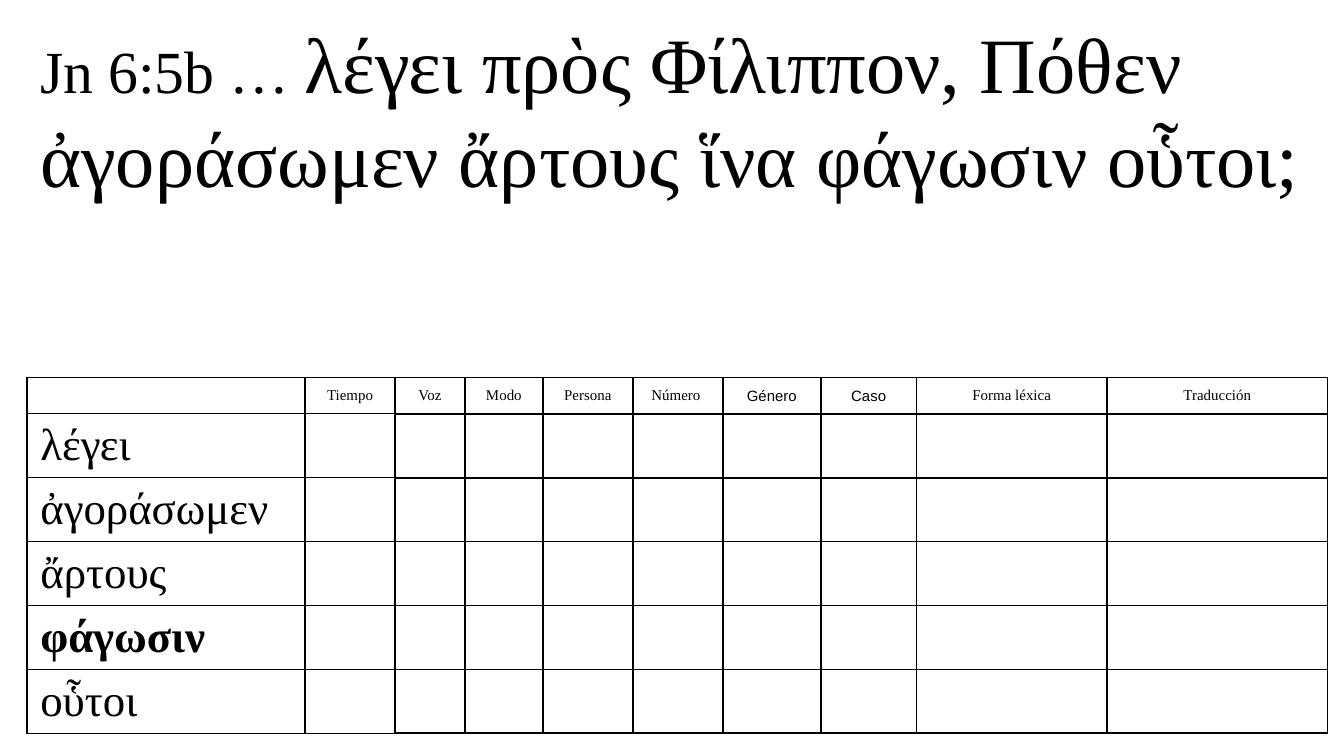
from lxml import etree
from pptx import Presentation
from pptx.dml.color import RGBColor
from pptx.enum.text import MSO_ANCHOR, MSO_AUTO_SIZE, PP_ALIGN
from pptx.oxml.ns import qn
from pptx.util import Inches, Pt

LEFT, CENTER = PP_ALIGN.LEFT, PP_ALIGN.CENTER
TOP, MIDDLE = MSO_ANCHOR.TOP, MSO_ANCHOR.MIDDLE
GROW = MSO_AUTO_SIZE.SHAPE_TO_FIT_TEXT

COLORS = {"ink": "000000"}
SERIF, SANS = "Times New Roman", "Arial"

VERSE = [
    ("Jn 6:5b … ", 32),
    ("λέγει πρὸς Φίλιππον, Πόθεν ἀγοράσωμεν ἄρτους ἵνα φάγωσιν οὗτοι;", 42),
]
HEADS = ["", "Tiempo", "Voz", "Modo", "Persona", "Número ", "Género",
         "Caso", "Forma léxica", "Traducción"]
SANS_HEADS = {"Género", "Caso"}
WORDS = ["λέγει", "ἀγοράσωμεν", "ἄρτους", "φάγωσιν", "οὗτοι"]
BOLD_WORD = "φάγωσιν"
WIDTHS = [2.07, 0.67, 0.52, 0.58, 0.67, 0.67, 0.73, 0.71, 1.42, 1.64]
HEAD_H, BODY_H = 0.27, 2.37

SIDE, EDGE = Inches(0.1), Inches(0.15) // 4
CELL = {"margin_left": SIDE, "margin_right": SIDE,
        "margin_top": EDGE, "margin_bottom": EDGE,
        "vertical_anchor": MIDDLE}


def apply(target, values):
    for name, value in values.items():
        setattr(target, name, value)


def add_run(para, text, size, font=SERIF, bold=False):
    run = para.add_run()
    run.text = text
    apply(run.font, {"size": Pt(size), "name": font, "bold": bold})
    run.font.color.rgb = RGBColor.from_string(COLORS["ink"])


def set_borders(cell, across):
    """Draw the four sides; across maps T and B to widths in points."""
    props = cell._tc.get_or_add_tcPr()
    widths = {"L": 1, "R": 1, **across}
    for spot, (side, width) in enumerate(widths.items()):
        line = etree.Element(qn(f"a:ln{side}"), w=str(Pt(width)))
        fill = etree.SubElement(line, qn("a:solidFill"))
        etree.SubElement(fill, qn("a:srgbClr"), val=COLORS["ink"])
        props.insert(spot, line)


def add_verse(slide):
    title = slide.shapes.title
    apply(title, {"left": Inches(0.2), "top": Inches(0.06),
                  "width": Inches(9.61), "height": Inches(1.51)})
    frame = title.text_frame
    apply(frame, {"word_wrap": True, "auto_size": GROW,
                  "vertical_anchor": TOP})
    para = frame.paragraphs[0]
    para.alignment = LEFT
    for text, size in VERSE:
        add_run(para, text, size)


def fill_head(cell, text):
    para = cell.text_frame.paragraphs[0]
    para.alignment = CENTER
    if text:
        add_run(para, text, 8, SANS if text in SANS_HEADS else SERIF)
    else:
        # Keeps the empty corner from stretching the row
        para._p.get_or_add_endParaRPr().set("sz", "800")


def add_grid(slide):
    count = len(WORDS)
    frame = slide.shapes.add_table(
        count + 1, len(HEADS), Inches(0.2), Inches(2.81),
        Inches(sum(WIDTHS)), Inches(HEAD_H + BODY_H))
    table = frame.table
    apply(table, {"first_row": False, "horz_banding": False})
    for col, width in zip(table.columns, WIDTHS):
        col.width = Inches(width)
    for i, row in enumerate(table.rows):
        row.height = Inches(BODY_H / count if i else HEAD_H)
        for j, cell in enumerate(row.cells):
            apply(cell, CELL)
            cell.fill.background()
            thin = 0.75 if j < 2 else 1
            set_borders(cell, {"T": thin if i else 1, "B": thin})

    for j, text in enumerate(HEADS):
        fill_head(table.cell(0, j), text)
    for i, word in enumerate(WORDS, 1):
        para = table.cell(i, 0).text_frame.paragraphs[0]
        add_run(para, word, 24, bold=word == BOLD_WORD)


def main():
    deck = Presentation()
    # A 16:9 page
    apply(deck, {"slide_width": Inches(10),
                 "slide_height": Inches(10) * 9 // 16})
    slide = deck.slides.add_slide(deck.slide_layouts[5])
    add_verse(slide)
    add_grid(slide)
    deck.save("out.pptx")


if __name__ == "__main__":
    main()
